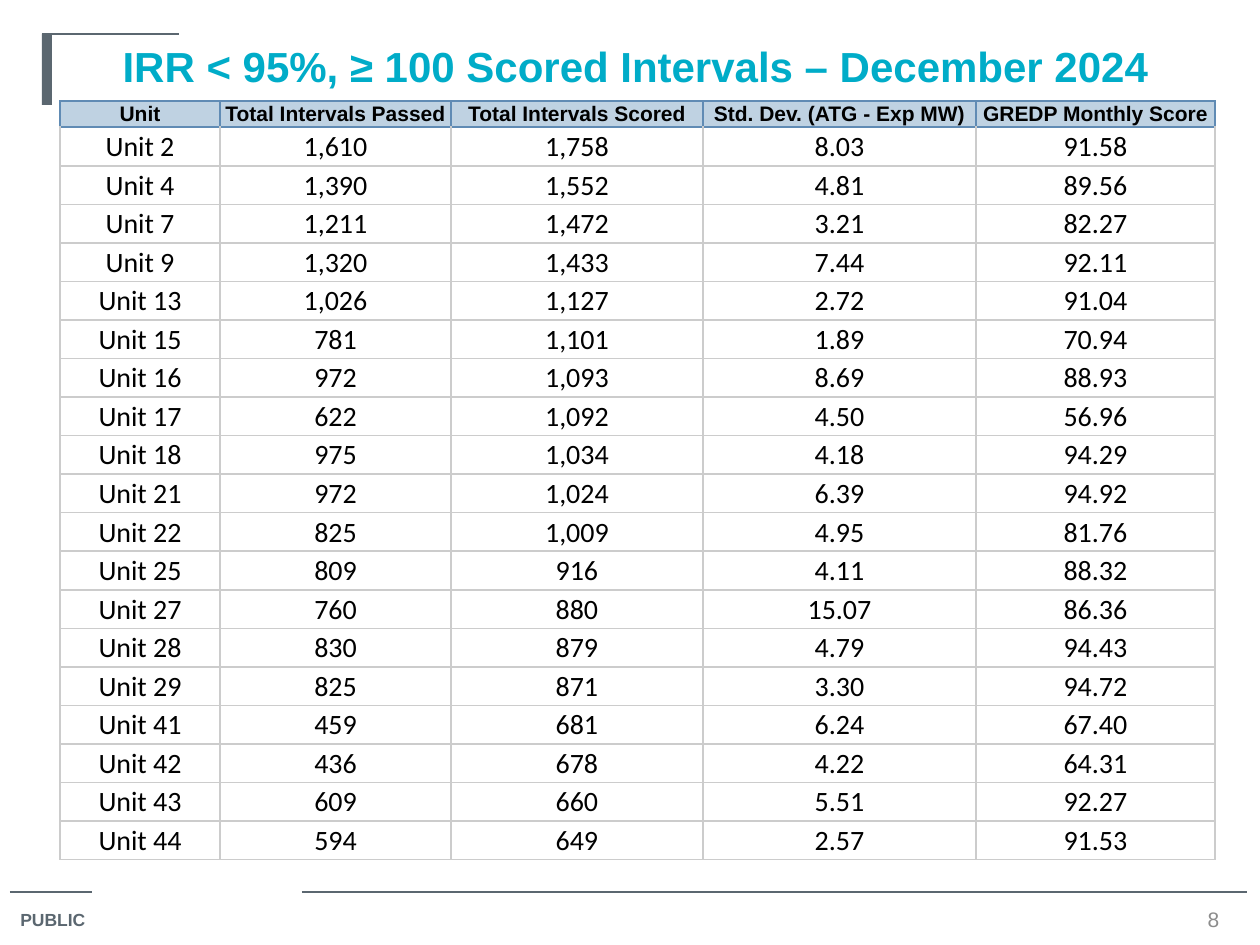
import dataclasses
import typing

import lxml.etree
import pptx
import pptx.dml.color
import pptx.enum.shapes
import pptx.enum.text
import pptx.oxml.ns
import pptx.util

COLORS = {
    "slate": "5B6770", "teal": "00ACC8", "gray": "8C8C8C", "black": "000000",
    "head": "BFD2E2", "edge": "608BB4", "grid": "CCCCCC",
}
ALIGN = pptx.enum.text.PP_ALIGN
ANCHOR = pptx.enum.text.MSO_ANCHOR
FIT = pptx.enum.text.MSO_AUTO_SIZE


@dataclasses.dataclass
class Style:
    size: int
    color: str
    face: str = "Arial"
    bold: bool = False


@dataclasses.dataclass
class Rule:
    left: int
    right: int
    top: int


@dataclasses.dataclass
class Label:
    text: str
    box: tuple[int, int, int, int]
    style: Style
    align: ALIGN
    anchor: ANCHOR
    fit: FIT


RULES = [Rule(10, 92, 892), Rule(302, 1247, 892), Rule(42, 179, 34)]
LABELS = [
    Label("PUBLIC", (8, 903, 97, 35), Style(10, "slate", bold=True),
          ALIGN.LEFT, ANCHOR.TOP, FIT.SHAPE_TO_FIT_TEXT),
    Label("8", (1187, 905, 53, 29), Style(12, "gray"),
          ALIGN.CENTER, ANCHOR.MIDDLE, FIT.NONE),
]
TITLE = Label("IRR < 95%, ≥ 100 Scored Intervals – December 2024",
              (53, 34, 1165, 98), Style(24, "teal", bold=True),
              ALIGN.CENTER, ANCHOR.TOP, FIT.NONE)

HEADS = ["Unit", "Total Intervals Passed", "Total Intervals Scored",
         "Std. Dev. (ATG - Exp MW)", "GREDP Monthly Score"]
UNITS = [
    ("Unit 2", "1,610", "1,758", "8.03", "91.58"),
    ("Unit 4", "1,390", "1,552", "4.81", "89.56"),
    ("Unit 7", "1,211", "1,472", "3.21", "82.27"),
    ("Unit 9", "1,320", "1,433", "7.44", "92.11"),
    ("Unit 13", "1,026", "1,127", "2.72", "91.04"),
    ("Unit 15", "781", "1,101", "1.89", "70.94"),
    ("Unit 16", "972", "1,093", "8.69", "88.93"),
    ("Unit 17", "622", "1,092", "4.50", "56.96"),
    ("Unit 18", "975", "1,034", "4.18", "94.29"),
    ("Unit 21", "972", "1,024", "6.39", "94.92"),
    ("Unit 22", "825", "1,009", "4.95", "81.76"),
    ("Unit 25", "809", "916", "4.11", "88.32"),
    ("Unit 27", "760", "880", "15.07", "86.36"),
    ("Unit 28", "830", "879", "4.79", "94.43"),
    ("Unit 29", "825", "871", "3.30", "94.72"),
    ("Unit 41", "459", "681", "6.24", "67.40"),
    ("Unit 42", "436", "678", "4.22", "64.31"),
    ("Unit 43", "609", "660", "5.51", "92.27"),
    ("Unit 44", "594", "649", "2.57", "91.53"),
]
WIDTHS = [160, 231, 252, 273, 239]
HEAD_H, BODY_H = 26, 733
HEAD = Style(12, "black", bold=True)
BODY = Style(16, "black", "Calibri")


def px(count: int) -> int:
    return round(count * 914400 / 126)


def rgb(name: str) -> pptx.dml.color.RGBColor:
    return pptx.dml.color.RGBColor.from_string(COLORS[name])


def write(frame: typing.Any, text: str, style: Style, align: ALIGN) -> None:
    para = frame.paragraphs[0]
    para.alignment = align
    run = para.add_run()
    run.text = text
    font = run.font
    font.name, font.size = style.face, pptx.util.Pt(style.size)
    font.bold, font.color.rgb = style.bold, rgb(style.color)


def fill_label(shape: typing.Any, label: Label) -> None:
    frame = shape.text_frame
    frame.word_wrap = True
    frame.auto_size = label.fit
    frame.vertical_anchor = label.anchor
    write(frame, label.text, label.style, label.align)


def draw_rule(slide: typing.Any, rule: Rule) -> None:
    line = slide.shapes.add_connector(
        pptx.enum.shapes.MSO_CONNECTOR.STRAIGHT,
        px(rule.left), px(rule.top), px(rule.right), px(rule.top))
    line.line.color.rgb = rgb("slate")
    line.line.width = pptx.util.Pt(0.75)
    props = line._element.spPr
    lxml.etree.SubElement(props, pptx.oxml.ns.qn("a:effectLst"))


def draw_edge(cell: typing.Any, side: str, color: str) -> None:
    qn = pptx.oxml.ns.qn
    props = cell._tc.get_or_add_tcPr()
    edge = lxml.etree.SubElement(props, qn(f"a:ln{side}"), w="12700")
    fill = lxml.etree.SubElement(edge, qn("a:solidFill"))
    lxml.etree.SubElement(fill, qn("a:srgbClr"), val=COLORS[color])


def draw_cell(cell: typing.Any, text: str, row: int) -> None:
    cell.vertical_anchor = ANCHOR.MIDDLE
    cell.margin_left = cell.margin_right = cell.margin_top = px(1)
    cell.margin_bottom = 0
    write(cell.text_frame, text, BODY if row else HEAD, ALIGN.CENTER)
    # The first body row shares its top edge with the header
    for side in "LRTB":
        dark = row == 0 or (row == 1 and side == "T")
        draw_edge(cell, side, "edge" if dark else "grid")
    if row:
        cell.fill.background()
    else:
        cell.fill.solid()
        cell.fill.fore_color.rgb = rgb("head")


def draw_table(slide: typing.Any) -> None:
    rows = [HEADS, *UNITS]
    table = slide.shapes.add_table(
        len(rows), len(HEADS), px(60), px(101),
        px(sum(WIDTHS)), px(HEAD_H + BODY_H)).table
    table.horz_banding = False
    for col, width in zip(table.columns, WIDTHS):
        col.width = px(width)
    for i, texts in enumerate(rows):
        table.rows[i].height = px(BODY_H) // len(UNITS) if i else px(HEAD_H)
        for j, text in enumerate(texts):
            draw_cell(table.cell(i, j), text, i)


def main() -> None:
    deck = pptx.Presentation()
    deck.slide_width, deck.slide_height = px(1260), px(945)
    slide = deck.slides.add_slide(deck.slide_layouts[5])

    # Frame lines and accent bar
    for rule in RULES:
        draw_rule(slide, rule)
    bar = slide.shapes.add_shape(
        pptx.enum.shapes.MSO_SHAPE.RECTANGLE, px(42), px(34), px(10), px(71))
    bar.shadow.inherit = False
    bar.fill.solid()
    bar.fill.fore_color.rgb = rgb("slate")
    bar.line.fill.background()

    # Footer texts
    for label in LABELS:
        fill_label(slide.shapes.add_textbox(*map(px, label.box)), label)

    # Title
    title = slide.shapes.title
    title.left, title.top, title.width, title.height = map(px, TITLE.box)
    fill_label(title, TITLE)

    # Unit scores
    draw_table(slide)
    deck.save("out.pptx")


if __name__ == "__main__":
    main()
